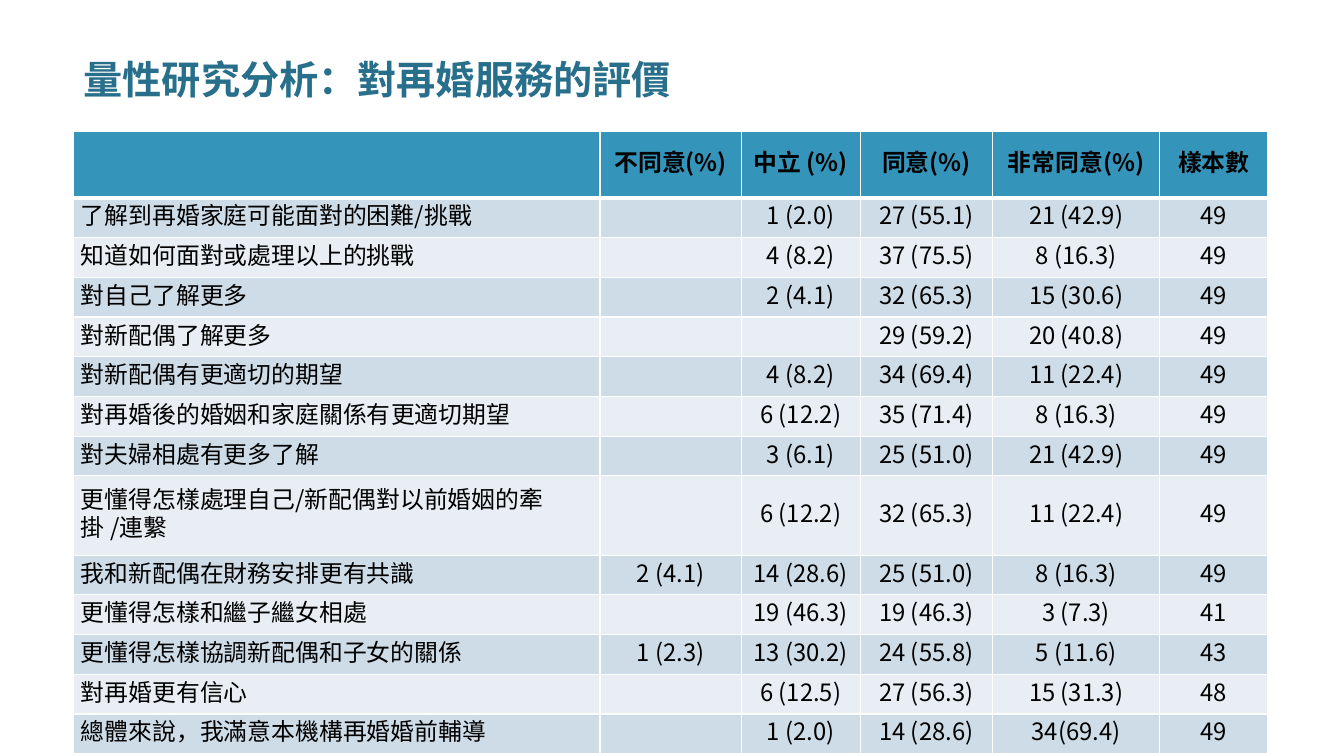
"""Build a slide with a table of ratings of a remarriage service."""
from lxml import etree
from pptx import Presentation
from pptx.dml.color import RGBColor
from pptx.enum.text import MSO_ANCHOR, PP_ALIGN
from pptx.oxml.ns import qn
from pptx.util import Cm, Pt

BOTTOM, MIDDLE = MSO_ANCHOR.BOTTOM, MSO_ANCHOR.MIDDLE
LEFT, CENTER = PP_ALIGN.LEFT, PP_ALIGN.CENTER
CJK, LATIN, TITLE_FONT = "Noto Sans CJK TC", "Calibri", "Cambria"
BLACK, WHITE, TITLE_COLOUR = "000000", "FFFFFF", "276F8B"
HEADER_FILL, ROW_FILLS = "3494BA", ("CEDCE7", "E8EEF3")

TITLE = "量性研究分析：對再婚服務的評價"
HEADER = [
    (), ("不同意", "(%)"), ("中立 ", "(%)"), ("同意", "(%)"),
    ("非常同意", "(%)"), ("樣本數",),
]
RATINGS = [
    (("了解到再婚家庭可能面對的困難", "/挑戰"), "", "1 (2.0)", "27 (55.1)", "21 (42.9)", "49"),
    (("知道如何面對或處理以上的挑戰",), "", "4 (8.2)", "37 (75.5)", "8 (16.3)", "49"),
    (("對自己了解更多",), "", "2 (4.1)", "32 (65.3)", "15 (30.6)", "49"),
    (("對新配偶了解更多",), "", "", "29 (59.2)", "20 (40.8)", "49"),
    (("對新配偶有更適切的期望",), "", "4 (8.2)", "34 (69.4)", "11 (22.4)", "49"),
    (("對再婚後的婚姻和家庭關係有", "更適切期望"), "", "6 (12.2)", "35 (71.4)", "8 (16.3)", "49"),
    (("對夫婦相處有更多了解",), "", "3 (6.1)", "25 (51.0)", "21 (42.9)", "49"),
    (("更懂得怎樣處理自己", "/新配偶對以前婚姻的牽掛 /連繫"), "", "6 (12.2)", "32 (65.3)", "11 (22.4)", "49"),
    (("我和新配偶在財務安排更有共識",), "2 (4.1)", "14 (28.6)", "25 (51.0)", "8 (16.3)", "49"),
    (("更懂得怎樣和繼子繼女相處",), "", "19 (46.3)", "19 (46.3)", "3 (7.3)", "41"),
    (("更懂得怎樣協調新配偶和子女的關係",), "1 (2.3)", "13 (30.2)", "24 (55.8)", "5 (11.6)", "43"),
    (("對再婚更有信心",), "", "6 (12.5)", "27 (56.3)", "15 (31.3)", "48"),
    (("總體來說，我滿意本機構再婚婚前", "輔導"), "", "1 (2.0)", "14 (28.6)", "34(69.4)", "49"),
]
COLUMN_WIDTHS = [13.26, 3.56, 3.0, 3.33, 4.22, 2.72]
HEADER_HEIGHT, ROW_HEIGHT, TWO_LINE_HEIGHT = 1.68, 1.0, 2.0
TWO_LINE_ROW = 8
TABLE_LEFT, TABLE_TOP = 1.86, 3.31


def colour(hex_code):
    return RGBColor.from_string(hex_code)


def add_run(paragraph, text, font_name, size, hex_code, bold):
    run = paragraph.add_run()
    run.text = text
    font = run.font
    font.name, font.size, font.bold = font_name, Pt(size), bold
    font.color.rgb = colour(hex_code)
    east_asian = etree.SubElement(run._r.get_or_add_rPr(), qn("a:ea"))
    east_asian.set("typeface", CJK)


def add_borders(cell, widths):
    properties = cell._tc.get_or_add_tcPr()
    for position, (side, width) in enumerate(widths.items()):
        line = etree.Element(qn(f"a:ln{side}"), w=str(Pt(width)))
        fill = etree.SubElement(line, qn("a:solidFill"))
        etree.SubElement(fill, qn("a:srgbClr"), val=WHITE)
        properties.insert(position, line)


def fill_cell(cell, runs, align, row):
    cell.margin_left = cell.margin_right = Cm(0.18)
    cell.margin_top = cell.margin_bottom = 0
    cell.vertical_anchor = MIDDLE
    cell.fill.solid()
    cell.fill.fore_color.rgb = colour(ROW_FILLS[(row - 1) % 2] if row else HEADER_FILL)
    add_borders(cell, {"L": 1, "R": 1, "T": 3 if row == 1 else 1, "B": 1 if row else 3})
    paragraph = cell.text_frame.paragraphs[0]
    paragraph.alignment, paragraph.line_spacing = align, Pt(20)
    for text, font_name in runs:
        add_run(paragraph, text, font_name, 17, BLACK, row == 0)


def add_title(slide):
    frame = slide.shapes.add_textbox(Cm(TABLE_LEFT), Cm(0.66), Cm(28.45), Cm(2.06)).text_frame
    frame.word_wrap, frame.vertical_anchor = True, BOTTOM
    paragraph = frame.paragraphs[0]
    paragraph.line_spacing = 0.9
    add_run(paragraph, TITLE, TITLE_FONT, 28, TITLE_COLOUR, True)


def add_ratings(slide):
    heights = [HEADER_HEIGHT] + [ROW_HEIGHT] * len(RATINGS)
    heights[TWO_LINE_ROW] = TWO_LINE_HEIGHT
    table = slide.shapes.add_table(
        len(heights), len(COLUMN_WIDTHS), Cm(TABLE_LEFT), Cm(TABLE_TOP),
        Cm(sum(COLUMN_WIDTHS)), Cm(sum(heights))).table
    for column, width in zip(table.columns, COLUMN_WIDTHS):
        column.width = Cm(width)
    for row, (height, entries) in enumerate(zip(heights, [HEADER] + RATINGS)):
        table.rows[row].height = Cm(height)
        for column, entry in enumerate(entries):
            if isinstance(entry, tuple):
                runs = list(zip(entry, (LATIN, CJK)))
            else:
                runs = [(entry, CJK)] if entry else []
            fill_cell(table.cell(row, column), runs, CENTER if column else LEFT, row)


def main():
    presentation = Presentation()
    presentation.slide_width, presentation.slide_height = Cm(33.87), Cm(19.05)
    slide = presentation.slides.add_slide(presentation.slide_layouts[6])
    add_title(slide)
    add_ratings(slide)
    presentation.save("out.pptx")


if __name__ == "__main__":
    main()
